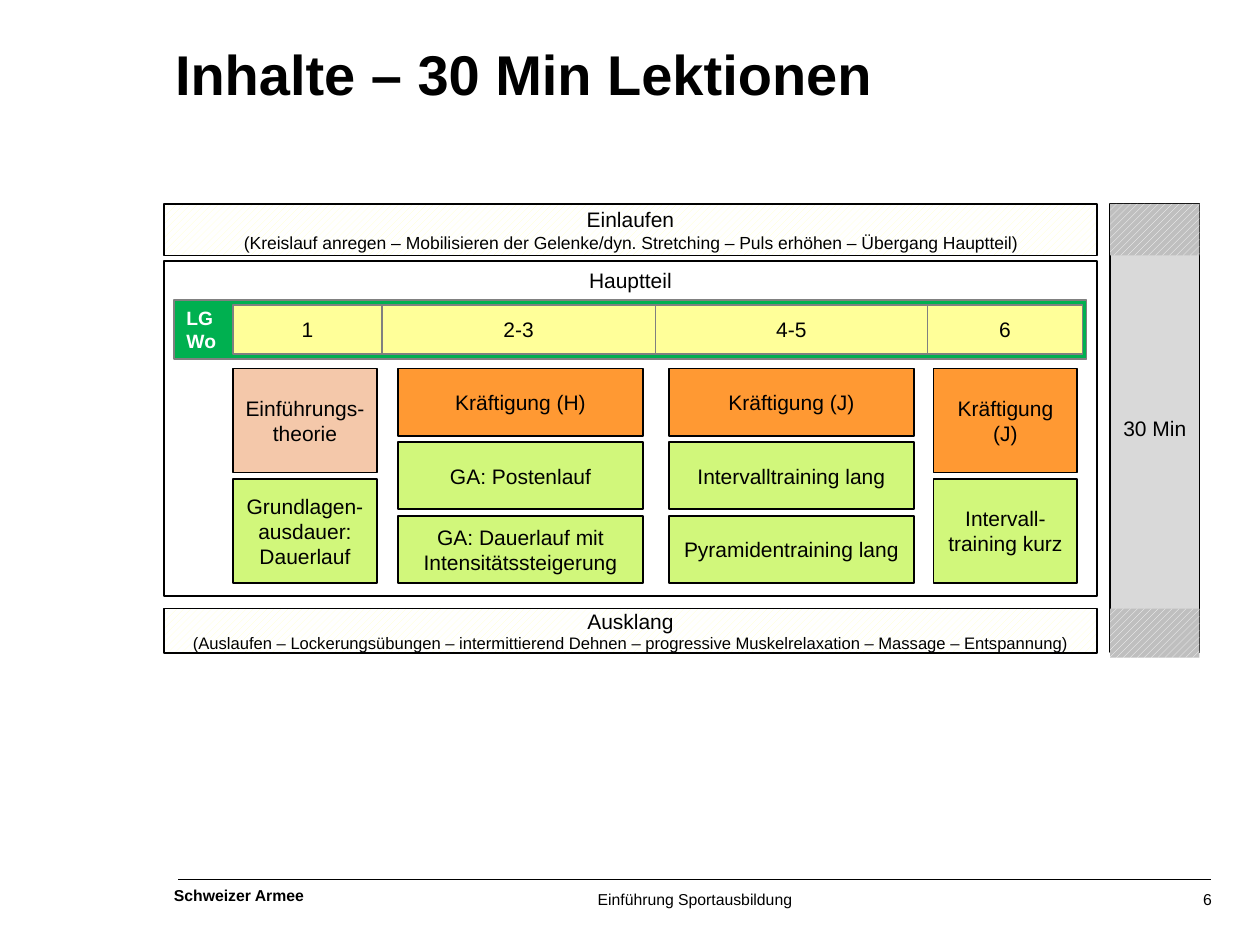
from dataclasses import dataclass
from itertools import accumulate

from pptx import Presentation
from pptx.dml.color import RGBColor
from pptx.enum.dml import MSO_PATTERN_TYPE as Pattern
from pptx.enum.shapes import MSO_CONNECTOR as Connector, MSO_SHAPE as Preset
from pptx.enum.text import MSO_ANCHOR as Anchor, PP_ALIGN as Align
from pptx.oxml.ns import qn
from pptx.shapes.autoshape import Shape
from pptx.slide import Slide
from pptx.util import Cm, Pt
from lxml.etree import SubElement

FONT = "Arial"
BLACK = RGBColor(0x00, 0x00, 0x00)
WHITE = RGBColor(0xFF, 0xFF, 0xFF)
GRAY = RGBColor(0x80, 0x80, 0x80)
SILVER = RGBColor(0xBF, 0xBF, 0xBF)
LIGHT_GRAY = RGBColor(0xD9, 0xD9, 0xD9)
CREAM = RGBColor(0xFF, 0xFF, 0xCC)
YELLOW = RGBColor(0xFF, 0xFF, 0x99)
GREEN = RGBColor(0x00, 0xB0, 0x50)
LIME = RGBColor(0xD1, 0xF7, 0x7B)
ORANGE = RGBColor(0xFF, 0x99, 0x33)
PEACH = RGBColor(0xF4, 0xC8, 0xAA)


@dataclass(frozen=True)
class Hatch:
    fore: RGBColor
    back: RGBColor


@dataclass(frozen=True)
class Box:
    left: float
    top: float
    width: float
    height: float
    text: str = ""
    fill: RGBColor | Hatch | None = None
    line: RGBColor | None = BLACK
    line_width: float = 1
    sizes: tuple[float, ...] = (12,)
    color: RGBColor = BLACK
    bold: bool = False
    align: Align = Align.CENTER
    anchor: Anchor = Anchor.MIDDLE
    preset: Preset = Preset.RECTANGLE


@dataclass(frozen=True)
class Activity:
    text: str
    fill: RGBColor


@dataclass(frozen=True)
class Phase:
    weeks: str
    week_width: float
    left: float
    width: float
    activities: tuple[Activity, ...]


CREAM_HATCH = Hatch(CREAM, WHITE)
GRAY_HATCH = Hatch(WHITE, SILVER)
FRAME_LEFT, FRAME_WIDTH = 3.3, 18.82
TIME_LEFT, TIME_WIDTH = 22.38, 1.8
START_TOP, END_TOP = 4.11, 12.27
WEEKS_LEFT, WEEKS_TOP, WEEKS_HEIGHT = 4.7, 6.15, 0.99
ACTIVITIES_TOP, ACTIVITIES_HEIGHT, ACTIVITY_GAP = 7.43, 4.32, 0.13

PHASES = (
    Phase("1", 3, 4.7, 2.9, (
        Activity("Einführungs-theorie", PEACH),
        Activity("Grundlagen-ausdauer: Dauerlauf", LIME))),
    Phase("2-3", 5.51, 8.03, 4.93, (
        Activity("Kräftigung (H)", ORANGE),
        Activity("GA: Postenlauf", LIME),
        Activity("GA: Dauerlauf mit Intensitätssteigerung", LIME))),
    Phase("4-5", 5.49, 13.49, 4.93, (
        Activity("Kräftigung (J)", ORANGE),
        Activity("Intervalltraining lang", LIME),
        Activity("Pyramidentraining lang", LIME))),
    Phase("6", 3.12, 18.82, 2.9, (
        Activity("Kräftigung (J)", ORANGE),
        Activity("Intervall-training kurz", LIME))),
)

LESSON_BOXES = (
    Box(FRAME_LEFT, START_TOP, FRAME_WIDTH, 1.04,
        "Einlaufen\n(Kreislauf anregen – Mobilisieren der Gelenke/dyn. Stretching"
        " – Puls erhöhen – Übergang Hauptteil)", CREAM_HATCH, sizes=(12, 10)),
    Box(FRAME_LEFT, END_TOP, FRAME_WIDTH, 0.89,
        "Ausklang\n(Auslaufen – Lockerungsübungen – intermittierend Dehnen"
        " – progressive Muskelrelaxation – Massage – Entspannung)",
        CREAM_HATCH, sizes=(12, 9.5)),
    Box(FRAME_LEFT, 5.26, FRAME_WIDTH, 6.76, "Hauptteil", anchor=Anchor.TOP),
    Box(TIME_LEFT, START_TOP, TIME_WIDTH, 9.04, "30 Min", LIGHT_GRAY),
    Box(TIME_LEFT, START_TOP, TIME_WIDTH, 1.04, fill=GRAY_HATCH, line=None),
    Box(TIME_LEFT, END_TOP, TIME_WIDTH, 0.99, fill=GRAY_HATCH, line=None),
    Box(3.51, 6.05, 18.39, 1.19, "LG\vWo", GREEN, GRAY, 0.75, (11,), WHITE,
        True, Align.LEFT),
)


def write_text(shape: Shape, box: Box) -> None:
    text_frame = shape.text_frame
    text_frame.text = box.text
    text_frame.word_wrap = True
    text_frame.vertical_anchor = box.anchor
    for paragraph, size in zip(text_frame.paragraphs, box.sizes):
        paragraph.alignment = box.align
        for run in paragraph.runs:
            run.font.name = FONT
            run.font.size = Pt(size)
            run.font.bold = box.bold
            run.font.color.rgb = box.color


def draw_box(slide: Slide, box: Box) -> Shape:
    shape = slide.shapes.add_shape(
        box.preset, Cm(box.left), Cm(box.top), Cm(box.width), Cm(box.height))
    shape.shadow.inherit = False
    if isinstance(box.fill, Hatch):
        shape.fill.patterned()
        shape.fill.pattern = Pattern.WIDE_UPWARD_DIAGONAL
        shape.fill.fore_color.rgb = box.fill.fore
        shape.fill.back_color.rgb = box.fill.back
    elif box.fill is None:
        shape.fill.background()
    else:
        shape.fill.solid()
        shape.fill.fore_color.rgb = box.fill
    if box.line is None:
        shape.line.fill.background()
    else:
        shape.line.color.rgb = box.line
        shape.line.width = Pt(box.line_width)
    write_text(shape, box)
    return shape


def clear_margins(shape: Shape) -> None:
    text_frame = shape.text_frame
    text_frame.margin_left = text_frame.margin_right = 0
    text_frame.margin_top = text_frame.margin_bottom = 0


def draw_label(slide: Slide, box: Box, wrap: bool = False) -> None:
    shape = slide.shapes.add_textbox(
        Cm(box.left), Cm(box.top), Cm(box.width), Cm(box.height))
    write_text(shape, box)
    clear_margins(shape)
    shape.text_frame.word_wrap = wrap


def draw_footer(slide: Slide) -> None:
    draw_label(slide, Box(23.8, 17.93, 0.63, 0.38, "6", sizes=(9,),
                          align=Align.RIGHT, anchor=Anchor.TOP))
    for left, width, height, text, bold in (
            (3.43, 2.82, 0.53, "Schweizer Armee", True),
            (11.89, 4.27, 1.09, "Einführung Sportausbildung", False)):
        shape = draw_box(slide, Box(
            left, 17.78, width, height, text, line=None, sizes=(9,), bold=bold,
            align=Align.LEFT, anchor=Anchor.TOP, preset=Preset.OCTAGON))
        clear_margins(shape)
        shape.text_frame.word_wrap = False
    rule = slide.shapes.add_connector(
        Connector.STRAIGHT, Cm(24.41), Cm(17.73), Cm(3.58), Cm(17.73))
    rule.line.color.rgb = BLACK
    rule.line.width = Pt(0.75)
    SubElement(rule.element.spPr, qn("a:effectLst"))


def draw_phases(slide: Slide) -> None:
    week_lefts = accumulate((phase.week_width for phase in PHASES), initial=WEEKS_LEFT)
    for phase, week_left in zip(PHASES, week_lefts):
        draw_box(slide, Box(week_left, WEEKS_TOP, phase.week_width, WEEKS_HEIGHT,
                            phase.weeks, YELLOW, GRAY, 0.75))
        pitch = (ACTIVITIES_HEIGHT + ACTIVITY_GAP) / len(phase.activities)
        for row, activity in enumerate(phase.activities):
            draw_box(slide, Box(phase.left, ACTIVITIES_TOP + row * pitch, phase.width,
                                pitch - ACTIVITY_GAP, activity.text, activity.fill))


def main() -> None:
    presentation = Presentation()
    presentation.slide_width, presentation.slide_height = Cm(25.4), Cm(19.05)
    slide = presentation.slides.add_slide(presentation.slide_layouts[6])
    draw_footer(slide)
    draw_label(slide, Box(3.53, 0.79, 20.73, 2.74, "Inhalte – 30 Min Lektionen",
                          sizes=(32,), bold=True, align=Align.LEFT,
                          anchor=Anchor.TOP), wrap=True)
    for box in LESSON_BOXES:
        draw_box(slide, box)
    draw_phases(slide)
    presentation.save("out.pptx")


if __name__ == "__main__":
    main()
